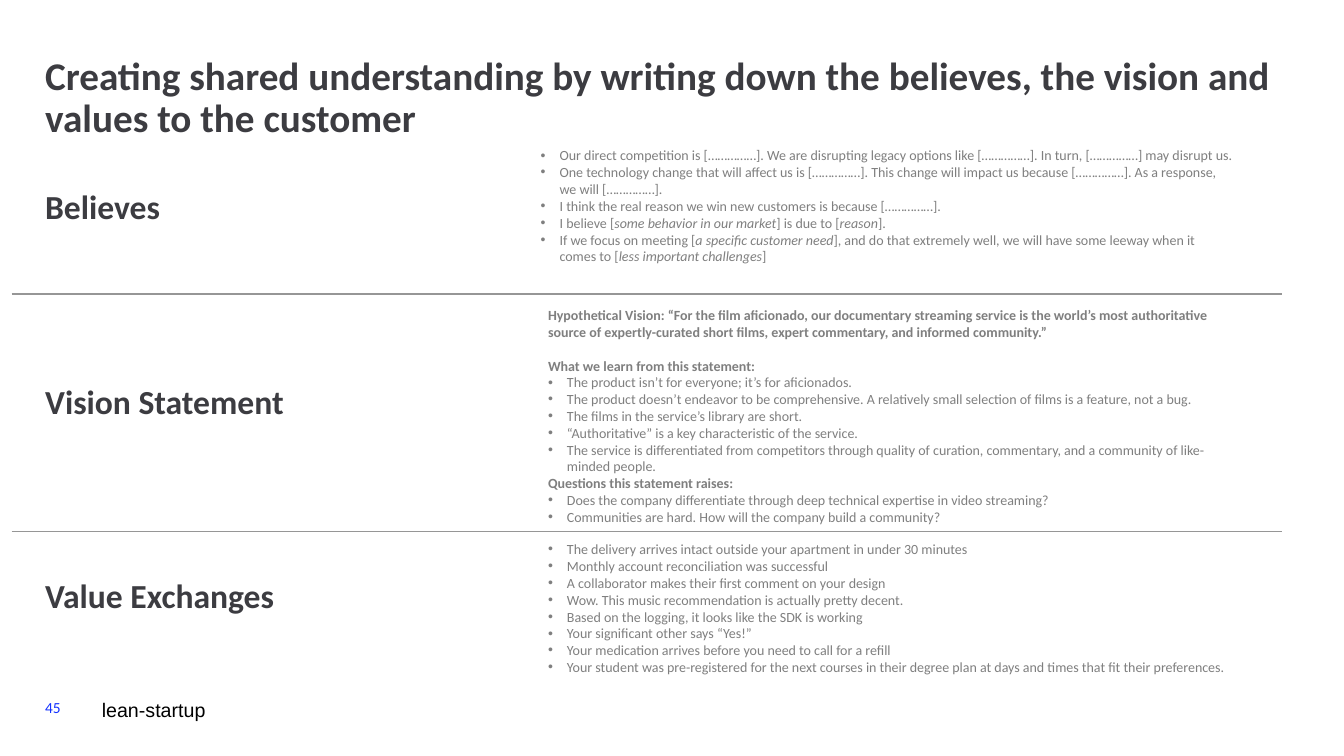
from dataclasses import dataclass

import lxml.etree
import pptx
import pptx.dml.color
import pptx.enum.shapes
import pptx.enum.text
import pptx.oxml.ns
import pptx.util

EMU_PER_PX = 9525
INDENT = 18
COLORS = {"heading": "3C3C41", "body": "7F7F7F", "rule": "969696",
          "number": "1432FF", "footer": "000000"}


@dataclass(frozen=True)
class Box:
    left: int
    top: int
    width: int
    height: int


@dataclass(frozen=True)
class Style:
    size: int
    color: str
    bold: bool = False
    font: str = "Calibri"
    line_spacing: float = 1.0


@dataclass(frozen=True)
class Entry:
    """One paragraph; parts between asterisks are italic."""
    text: str
    style: Style
    bulleted: bool = False
    space_before: int = 0


@dataclass(frozen=True)
class Block:
    box: Box
    entries: list[Entry]
    anchor: pptx.enum.text.MSO_ANCHOR = pptx.enum.text.MSO_ANCHOR.TOP


TITLE = Style(28, "heading", bold=True, line_spacing=0.9)
SECTION = Style(24, "heading", bold=True, line_spacing=0.9)
BODY = Style(10, "body")
LEAD = Style(10, "body", bold=True)
NUMBER = Style(11, "number")
FOOTER = Style(14, "footer", font="Arial")


def bullets(*texts: str) -> list[Entry]:
    return [Entry(text, BODY, bulleted=True) for text in texts]


HEADLINE = Block(Box(43, 54, 1193, 82), [Entry(
    "Creating shared understanding by writing down the believes, "
    "the vision and values to the customer", TITLE)])

BLOCKS = [
    Block(Box(43, 184, 456, 400), [
        Entry("Believes", SECTION),
        Entry("Vision Statement", SECTION, space_before=113),
        Entry("Value Exchanges", SECTION, space_before=113),
    ], pptx.enum.text.MSO_ANCHOR.MIDDLE),
    Block(Box(97, 665, 381, 29), [Entry("lean-startup", FOOTER)]),
    Block(Box(43, 665, 53, 29), [Entry("45", NUMBER)]),
    Block(Box(515, 140, 660, 156), bullets(
        "Our direct competition is [……………]. We are disrupting legacy options like "
        "[……………]. In turn, [……………] may disrupt us.",
        "One technology change that will affect us is [……………]. This change will "
        "impact us because [……………]. As a response, we will [……………].",
        "I think the real reason we win new customers is because [……………].",
        "I believe [*some behavior in our market*] is due to [*reason*].",
        "If we focus on meeting [*a specific customer need*], and do that extremely well, "
        "we will have some leeway when it comes to [*less important challenges*]",
    )),
    Block(Box(522, 292, 660, 214), [
        Entry("Hypothetical Vision: “For the film aficionado, our documentary streaming "
              "service is the world’s most authoritative source of expertly-curated short "
              "films, expert commentary, and informed community.”", LEAD),
        Entry("What we learn from this statement:", LEAD, space_before=12),
        *bullets(
            "The product isn’t for everyone; it’s for aficionados.",
            "The product doesn’t endeavor to be comprehensive. A relatively small "
            "selection of films is a feature, not a bug.",
            "The films in the service’s library are short.",
            "“Authoritative” is a key characteristic of the service.",
            "The service is differentiated from competitors through quality of curation, "
            "commentary, and a community of like-minded people.",
        ),
        Entry("Questions this statement raises:", LEAD),
        *bullets(
            "Does the company differentiate through deep technical expertise in video streaming?",
            "Communities are hard. How will the company build a community?",
        ),
    ]),
    Block(Box(522, 515, 660, 139), bullets(
        "The delivery arrives intact outside your apartment in under 30 minutes",
        "Monthly account reconciliation was successful",
        "A collaborator makes their first comment on your design",
        "Wow. This music recommendation is actually pretty decent.",
        "Based on the logging, it looks like the SDK is working",
        "Your significant other says “Yes!”",
        "Your medication arrives before you need to call for a refill",
        "Your student was pre-registered for the next courses in their degree plan "
        "at days and times that fit their preferences.",
    )),
]

RULE_LEFT, RULE_RIGHT = 11, 1221
RULE_TOPS = [280, 506]


def px(length: int) -> pptx.util.Emu:
    return pptx.util.Emu(length * EMU_PER_PX)


def rgb(name: str) -> pptx.dml.color.RGBColor:
    return pptx.dml.color.RGBColor.from_string(COLORS[name])


def add_bullet(paragraph, color: str) -> None:
    qn = pptx.oxml.ns.qn
    properties = paragraph._p.get_or_add_pPr()
    properties.set("marL", str(px(INDENT)))
    properties.set("indent", str(px(-INDENT)))
    bullet_color = lxml.etree.SubElement(properties, qn("a:buClr"))
    lxml.etree.SubElement(bullet_color, qn("a:srgbClr"), val=COLORS[color])
    lxml.etree.SubElement(properties, qn("a:buFont"), typeface="Arial")
    lxml.etree.SubElement(properties, qn("a:buChar"), char="•")


def write_entry(paragraph, entry: Entry) -> None:
    style = entry.style
    if entry.bulleted:
        add_bullet(paragraph, style.color)
    paragraph.alignment = pptx.enum.text.PP_ALIGN.LEFT
    paragraph.line_spacing = style.line_spacing
    paragraph.space_before = pptx.util.Pt(entry.space_before)
    paragraph.font.name = style.font
    paragraph.font.size = pptx.util.Pt(style.size)
    paragraph.font.bold = style.bold
    paragraph.font.color.rgb = rgb(style.color)
    for position, part in enumerate(entry.text.split("*")):
        run = paragraph.add_run()
        run.text = part
        if position % 2:
            run.font.italic = True


def fill_block(shape, block: Block) -> None:
    """Place a text shape and write the block's entries into it."""
    box = block.box
    shape.left, shape.top = px(box.left), px(box.top)
    shape.width, shape.height = px(box.width), px(box.height)
    frame = shape.text_frame
    frame.word_wrap = True
    frame.auto_size = pptx.enum.text.MSO_AUTO_SIZE.NONE
    frame.vertical_anchor = block.anchor
    frame.margin_left = frame.margin_right = frame.margin_top = frame.margin_bottom = 0
    for position, entry in enumerate(block.entries):
        paragraph = frame.add_paragraph() if position else frame.paragraphs[0]
        write_entry(paragraph, entry)


def add_rule(slide, top: int) -> None:
    rule = slide.shapes.add_connector(
        pptx.enum.shapes.MSO_CONNECTOR.STRAIGHT,
        px(RULE_LEFT), px(top), px(RULE_RIGHT), px(top))
    rule.line.color.rgb = rgb("rule")
    rule.line.width = pptx.util.Pt(0.75)
    lxml.etree.SubElement(rule._element.spPr, pptx.oxml.ns.qn("a:effectLst"))


def main() -> None:
    deck = pptx.Presentation()
    deck.slide_width, deck.slide_height = px(1280), px(720)
    slide = deck.slides.add_slide(deck.slide_layouts.get_by_name("Title Only"))
    fill_block(slide.shapes.title, HEADLINE)
    for block in BLOCKS:
        fill_block(slide.shapes.add_textbox(0, 0, 0, 0), block)
    for top in RULE_TOPS:
        add_rule(slide, top)
    deck.save("out.pptx")


if __name__ == "__main__":
    main()
